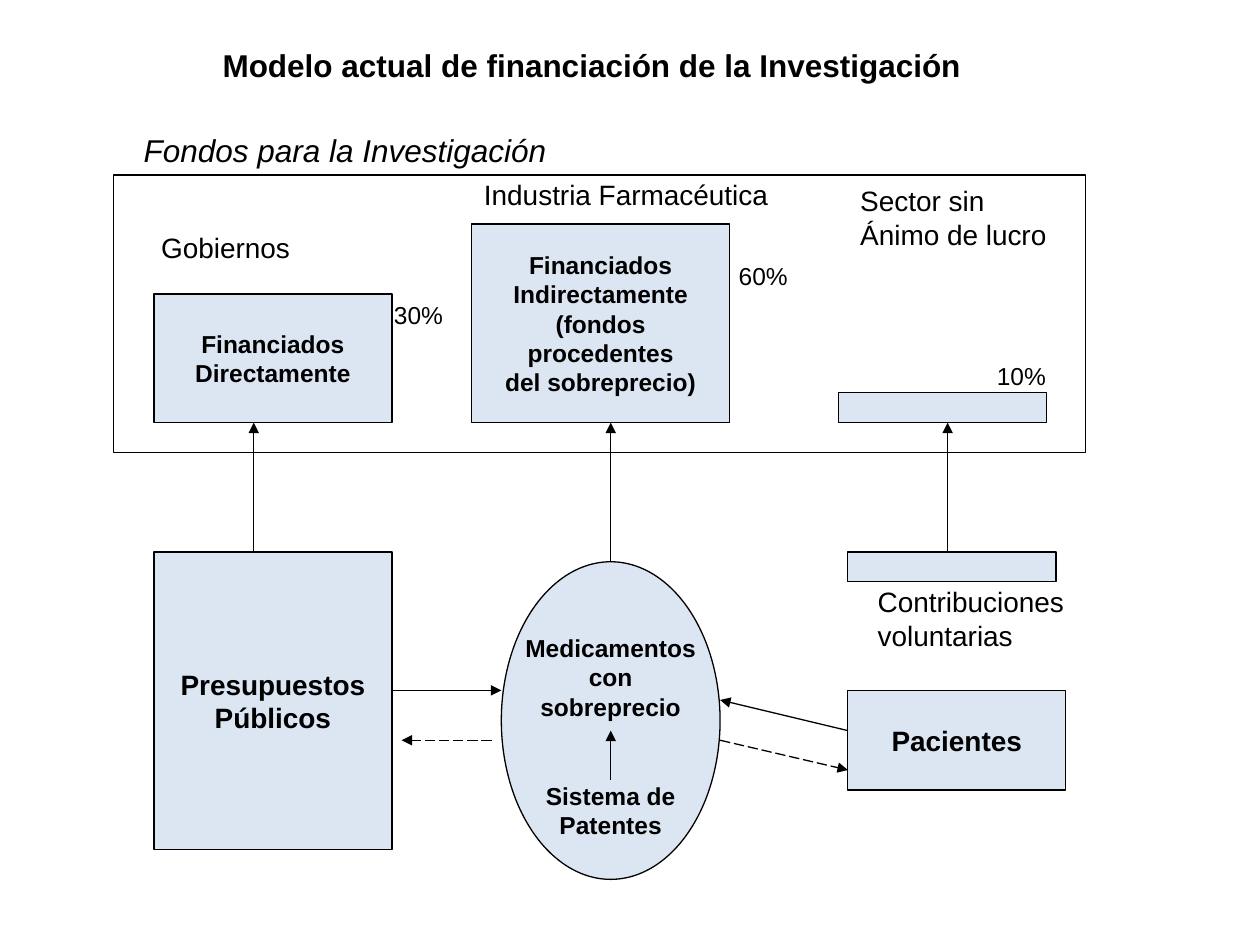
from lxml import etree
from pptx import Presentation
from pptx import util as u
from pptx.dml.color import RGBColor
from pptx.enum import dml, shapes, text
from pptx.oxml.ns import qn

BLACK = RGBColor(0x00, 0x00, 0x00)
PALE_BLUE = RGBColor(0xDC, 0xE6, 0xF2)
FONT = "Arial"

# Shared edges, in points
FUNDS_BOTTOM = 241.5
SOURCES_TOP = 315.5
GOVERNMENT_LEFT, GOVERNMENT_WIDTH = 88, 136
GOVERNMENT_RIGHT = GOVERNMENT_LEFT + GOVERNMENT_WIDTH
DONATIONS_LEFT = 484.5
BAR_WIDTH, BAR_HEIGHT = 119, 17
DRUGS_LEFT, DRUGS_TOP, DRUGS_WIDTH, DRUGS_HEIGHT = 286.5, 321, 125, 181.5
DRUGS_RIGHT = DRUGS_LEFT + DRUGS_WIDTH
DRUGS_CENTRE = DRUGS_LEFT + DRUGS_WIDTH / 2


class Diagram:
    """Holds the style and the slide; all lengths are in points."""

    def __init__(self, slide):
        self.slide = slide
        self.line_width = u.Pt(0.75)

    def set_words(self, frame, words, size, align, bold=False, italic=False):
        frame.text = words
        for paragraph in frame.paragraphs:
            paragraph.alignment = align
            for run in paragraph.runs:
                font = run.font
                font.name, font.size = FONT, u.Pt(size)
                font.bold, font.italic = bold, italic
                font.color.rgb = BLACK

    def title(self, words, left, top, width, height):
        title = self.slide.shapes.title
        title.left, title.top = u.Pt(left), u.Pt(top)
        title.width, title.height = u.Pt(width), u.Pt(height)
        frame = title.text_frame
        frame.vertical_anchor = text.MSO_ANCHOR.TOP
        frame.auto_size = text.MSO_AUTO_SIZE.NONE
        self.set_words(frame, words, 18, text.PP_ALIGN.LEFT, bold=True)

    def box(self, left, top, width, height, words="", size=14,
            kind=shapes.MSO_SHAPE.RECTANGLE, fill=PALE_BLUE):
        box = self.slide.shapes.add_shape(
            kind, u.Pt(left), u.Pt(top), u.Pt(width), u.Pt(height))
        box.shadow.inherit = False
        if fill is None:
            box.fill.background()
        else:
            box.fill.solid()
            box.fill.fore_color.rgb = fill
        box.line.color.rgb = BLACK
        box.line.width = self.line_width
        if words:
            frame = box.text_frame
            frame.word_wrap = False
            frame.vertical_anchor = text.MSO_ANCHOR.MIDDLE
            self.set_words(frame, words, size, text.PP_ALIGN.CENTER, bold=True)
        return box

    def label(self, left, top, width, height, words, size=16, italic=False):
        label = self.slide.shapes.add_textbox(
            u.Pt(left), u.Pt(top), u.Pt(width), u.Pt(height))
        label.text_frame.word_wrap = True
        self.set_words(label.text_frame, words, size, text.PP_ALIGN.LEFT, italic=italic)

    def arrow(self, x1, y1, x2, y2, dashed=False):
        arrow = self.slide.shapes.add_connector(
            shapes.MSO_CONNECTOR.STRAIGHT, u.Pt(x1), u.Pt(y1), u.Pt(x2), u.Pt(y2))
        arrow.line.color.rgb = BLACK
        arrow.line.width = self.line_width
        if dashed:
            arrow.line.dash_style = dml.MSO_LINE.LONG_DASH
        properties = arrow._element.spPr
        etree.SubElement(properties.find(qn("a:ln")), qn("a:tailEnd"), type="triangle")
        etree.SubElement(properties, qn("a:effectLst"))
        return arrow


def main():
    deck = Presentation()
    deck.slide_width, deck.slide_height = u.Pt(720), u.Pt(540)
    diagram = Diagram(deck.slides.add_slide(deck.slide_layouts[5]))

    diagram.title("Modelo actual de financiación de la Investigación", 120, 22.5, 467, 29)
    diagram.label(75, 71.5, 263, 29, "Fondos para la Investigación", size=18, italic=True)
    diagram.box(65, 100, 555.5, 158.5, fill=None)

    # Research funds, standing on a common base line
    for left, width, height, words in (
        (GOVERNMENT_LEFT, GOVERNMENT_WIDTH, 73.5, "Financiados\nDirectamente"),
        (269.5, 147.5, 113.5,
         "Financiados\nIndirectamente\n(fondos\nprocedentes\ndel sobreprecio)"),
        (479, BAR_WIDTH, BAR_HEIGHT, ""),
    ):
        diagram.box(left, FUNDS_BOTTOM - height, width, height, words)

    # Where the money comes from
    diagram.box(GOVERNMENT_LEFT, SOURCES_TOP, GOVERNMENT_WIDTH, 170,
                "Presupuestos\nPúblicos", size=16)
    diagram.box(DONATIONS_LEFT, SOURCES_TOP, BAR_WIDTH, BAR_HEIGHT)
    diagram.box(DONATIONS_LEFT, 394.5, 124.5, 57, "Pacientes", size=16)
    drugs = diagram.box(
        DRUGS_LEFT, DRUGS_TOP, DRUGS_WIDTH, DRUGS_HEIGHT,
        "Medicamentos\ncon\nsobreprecio\nSistema de\nPatentes",
        kind=shapes.MSO_SHAPE.OVAL)
    drugs.text_frame.margin_top = u.Pt(21.5)
    drugs.text_frame.paragraphs[3].space_before = u.Pt(34)

    for left, top, width, height, words in (
        (85, 128, 150, 26.5, "Gobiernos"),
        (269.5, 98, 199, 26.5, "Industria Farmacéutica"),
        (484.5, 101.5, 130, 46, "Sector sin\nÁnimo de lucro"),
        (494.5, 330.5, 130, 46, "Contribuciones\nvoluntarias"),
    ):
        diagram.label(left, top, width, height, words)

    for left, top, share in ((218, 168, "30%"), (415, 145.5, "60%"), (562.5, 202.5, "10%")):
        diagram.label(left, top, 54, 24, share, size=14)

    # Flows up to the funds
    for x in (145, 541.5):
        diagram.arrow(x, SOURCES_TOP, x, FUNDS_BOTTOM)
    to_industry = diagram.arrow(DRUGS_CENTRE, DRUGS_TOP, DRUGS_CENTRE, FUNDS_BOTTOM)
    to_industry.begin_connect(drugs, 0)

    # Flows around the overpriced drugs
    diagram.arrow(DRUGS_CENTRE, 445.5, DRUGS_CENTRE, 417.5)
    diagram.arrow(GOVERNMENT_RIGHT, 394.5, DRUGS_LEFT, 394.5)
    diagram.arrow(281, 423, 229.5, 423, dashed=True)
    diagram.arrow(DONATIONS_LEFT, 417.5, DRUGS_RIGHT, 400)
    diagram.arrow(DRUGS_RIGHT, 423, DONATIONS_LEFT, 440, dashed=True)

    deck.save("out.pptx")


if __name__ == "__main__":
    main()
